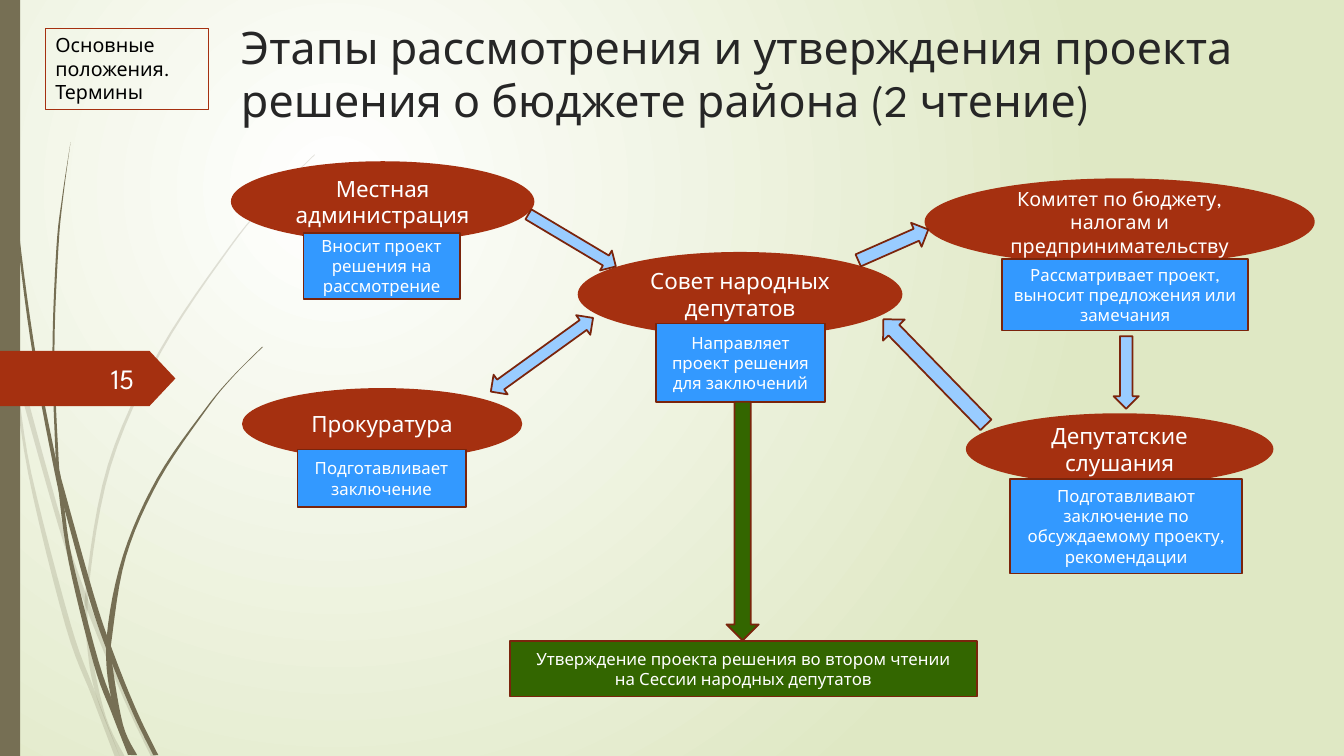
from lxml import etree
from pptx import Presentation
from pptx import util as u
from pptx.dml.color import RGBColor
from pptx.enum import shapes, text
from pptx.oxml.ns import qn

PX = u.Inches(1) // 100
FONT = "League Spartan"
KIND = shapes.MSO_SHAPE
ALIGN = text.PP_ALIGN
HUES = dict(white="FFFFFF", pale="DFE8C4", olive="766F54", rust="A53010",
            edge="7A240C", blue="3399FF", sky="99CCFF", green="336600",
            ink="262626", black="000000", num="FEFFFF")

# Each blade of grass: down one edge, back up the other.
LIGHT = [
    ([(0, 299), (10, 344), (17, 376), (58, 522), (84, 599), (123, 694), (150, 751)],
     [(155, 751), (127, 692), (92, 607), (62, 520), (14, 345), (9, 322), (0, 282)]),
    ([(11, 350), (28, 470), (65, 621), (92, 693), (114, 751)],
     [(119, 751), (93, 683), (70, 619), (31, 469), (17, 376)]),
    ([(312, 153), (268, 197), (228, 244), (158, 348), (107, 461), (85, 584),
      (87, 646), (96, 692), (119, 751)],
     [(124, 751), (105, 711), (91, 646), (88, 584), (110, 462), (160, 349),
      (229, 245), (268, 198), (312, 154)]),
]
DARK = [
    ([(3, 0), (4, 48), (7, 110), (17, 233), (33, 355), (56, 477), (64, 505),
      (88, 592), (106, 645), (132, 708), (152, 749)],
     [(157, 749), (136, 706), (113, 649), (93, 590), (60, 472), (55, 453),
      (36, 355), (19, 232), (8, 109), (5, 48), (4, 0)]),
    ([(70, 141), (62, 193), (56, 245), (52, 349), (55, 449), (57, 477),
      (68, 557), (93, 659), (111, 708), (127, 749)],
     [(133, 749), (116, 706), (98, 657), (72, 556), (64, 505), (60, 472),
      (58, 453), (54, 349), (58, 245), (63, 193), (70, 141)]),
    ([(260, 344), (231, 373), (204, 405), (156, 474), (122, 551), (106, 631),
      (110, 691), (130, 749)],
     [(136, 749), (122, 719), (111, 656), (111, 633), (125, 552), (158, 476),
      (205, 406), (231, 374), (261, 344)]),
]

# Oval, its name and size, then the card's box relative to the oval and its task.
STAGES = [
    ((229, 160, 301, 80), "Местная администрация", 16,
     (72, 71, 155, 66), "Вносит проект решения на рассмотрение"),
    ((573, 250, 322, 84), "Совет народных депутатов", 16,
     (78, 71, 167, 78), "Направляет проект решения для заключений"),
    ((240, 385, 278, 71), "Прокуратура", 16,
     (55, 61, 167, 57), "Подготавливает заключение"),
    ((917, 177, 387, 86), "Комитет по бюджету, налогам и предпринимательству", 14,
     (77, 80, 244, 71), "Рассматривает проект, выносит предложения или замечания"),
    ((958, 410, 305, 71), "Депутатские слушания", 16,
     (44, 65, 230, 94),
     "Подготавливают заключение по обсуждаемому проекту, рекомендации"),
]
ARROWS = [
    ((475, 340, 125, 24), 324.2, KIND.LEFT_RIGHT_ARROW, "sky"),
    ((517, 227, 101, 23), 30.8, KIND.RIGHT_ARROW, "sky"),
    ((848, 230, 76, 26), 336.2, KIND.RIGHT_ARROW, "sky"),
    ((1081, 357, 72, 25), 90, KIND.RIGHT_ARROW, "sky"),
    ((854, 354, 146, 30), 225.8, KIND.RIGHT_ARROW, "sky"),
    ((618, 501, 237, 32), 90, KIND.RIGHT_ARROW, "green"),
]


def rgb(hue):
    return RGBColor.from_string(HUES[hue])


def emu(box):
    return [v * PX for v in box]


def write(shape, words, size=12, hue="white", align=ALIGN.CENTER,
          anchor=text.MSO_ANCHOR.MIDDLE):
    frame = shape.text_frame
    frame.text = words
    frame.word_wrap = True
    frame.auto_size = text.MSO_AUTO_SIZE.NONE
    frame.vertical_anchor = anchor
    for para in frame.paragraphs:
        para.alignment = align
        font = para.runs[0].font
        font.name, font.size = FONT, u.Pt(size)
        font.color.rgb = rgb(hue)


def paint(shape, fill=None, line=None, width=1.25):
    shape.shadow.inherit = False
    if fill:
        shape.fill.solid()
        shape.fill.fore_color.rgb = rgb(fill)
    else:
        shape.fill.background()
    if line:
        shape.line.color.rgb = rgb(line)
        shape.line.width = u.Pt(width)
    else:
        shape.line.fill.background()


def draw(slide, kind, box, fill=None, line=None, width=1.25):
    shape = slide.shapes.add_shape(kind, *emu(box))
    paint(shape, fill, line, width)
    return shape


def smooth(points, steps=6):
    """Return a Catmull-Rom curve through the points, as a list of points."""
    ends = [points[0], *points, points[-1]]
    curve = [points[0]]
    for a, b, c, d in zip(ends, ends[1:], ends[2:], ends[3:]):
        for i in range(1, steps + 1):
            t = i / steps
            curve.append(tuple(
                (2 * q + (r - p) * t + (2 * p - 5 * q + 4 * r - s) * t ** 2
                 + (3 * q - p - 3 * r + s) * t ** 3) / 2
                for p, q, r, s in zip(a, b, c, d)))
    return curve


def grass(slide, blades, left=0, top=0, alpha=100):
    for down, back in blades:
        edge = [(round((left + x) * PX), round((top + y) * PX))
                for x, y in smooth(down) + smooth(back)]
        pen = slide.shapes.build_freeform(*edge[0], scale=1.0)
        pen.add_line_segments(edge[1:], close=True)
        blade = pen.convert_to_shape()
        paint(blade, "olive")
        if alpha < 100:
            tint = blade.element.find(".//" + qn("a:srgbClr"))
            etree.SubElement(tint, qn("a:alpha"), val=str(alpha * 1000))


def backdrop(slide):
    fill = slide.background.fill
    fill.gradient()
    for stop, hue in zip(fill.gradient_stops, ("white", "pale")):
        stop.color.rgb = rgb(hue)
    lin = slide.element.find(".//" + qn("a:lin"))
    ring = etree.Element(qn("a:path"), path="circle")
    etree.SubElement(ring, qn("a:fillToRect"),
                     l="50000", t="50000", r="100000", b="100000")
    lin.getparent().replace(lin, ring)


def number(slide, box, words):
    left, top, wide, high = box
    tag = draw(slide, KIND.PENTAGON, box, "rust")
    tag.adjustments[0] = 0.47
    label = slide.shapes.add_textbox(*emu((left + 58, top + 7, 85, 40)))
    write(label, words, size=20, hue="num", align=ALIGN.RIGHT)


def header(slide, box):
    title = slide.shapes.title
    title.left, title.top, title.width, title.height = emu(box)
    write(title, "Этапы рассмотрения и утверждения проекта решения о бюджете "
          "района (2 чтение)", size=32, hue="ink", align=ALIGN.LEFT)


def topic(slide, box):
    note = draw(slide, KIND.RECTANGLE, box, line="rust", width=0.75)
    write(note, "Основные положения. Термины", size=14, hue="black",
          align=ALIGN.LEFT, anchor=text.MSO_ANCHOR.TOP)


def stage(slide, box, name, size, card, task):
    left, top = box[:2]
    write(draw(slide, KIND.OVAL, box, "rust"), name, size=size)
    dx, dy, wide, high = card
    place = (left + dx, top + dy, wide, high)
    write(draw(slide, KIND.RECTANGLE, place, "blue", "edge"), task)


def arrow(slide, box, angle, kind, hue):
    draw(slide, kind, box, hue, "edge").rotation = angle


def result(slide, box):
    write(draw(slide, KIND.RECTANGLE, box, "green", "edge"),
          "Утверждение проекта решения во втором чтении\n"
          "на Сессии народных депутатов")


def main():
    deck = Presentation()
    deck.slide_width, deck.slide_height = emu((1333, 750))
    slide = deck.slides.add_slide(deck.slide_layouts.get_by_name("Title Only"))
    backdrop(slide)
    grass(slide, LIGHT, alpha=20)
    grass(slide, DARK)
    draw(slide, KIND.RECTANGLE, (0, 0, 20, 750), "olive")
    number(slide, (0, 348, 174, 55), "15")
    header(slide, (229, 8, 1057, 129))
    for item in STAGES:
        stage(slide, *item)
    for item in ARROWS:
        arrow(slide, *item)
    result(slide, (506, 636, 463, 55))
    topic(slide, (45, 28, 162, 81))
    deck.save("out.pptx")


if __name__ == "__main__":
    main()
